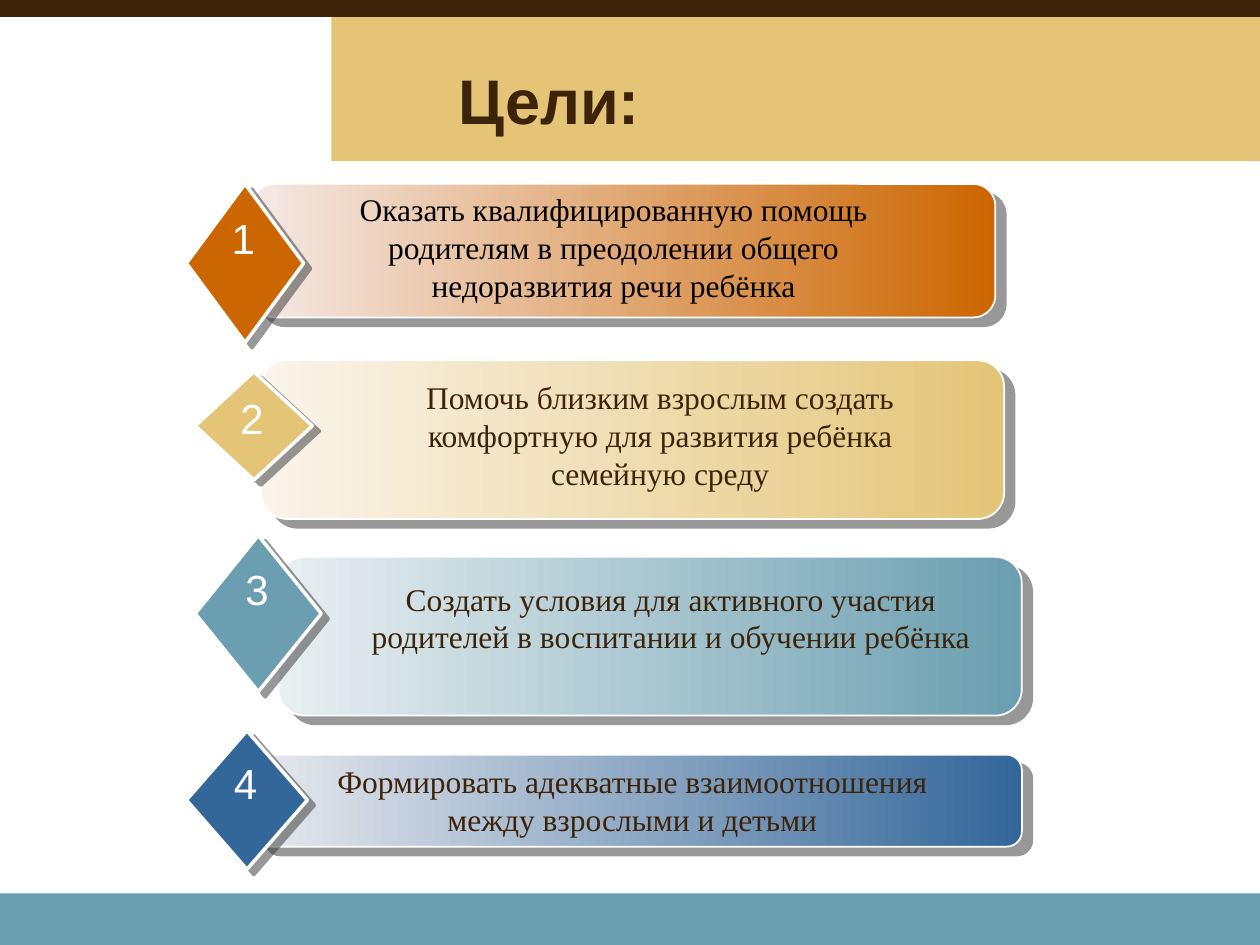
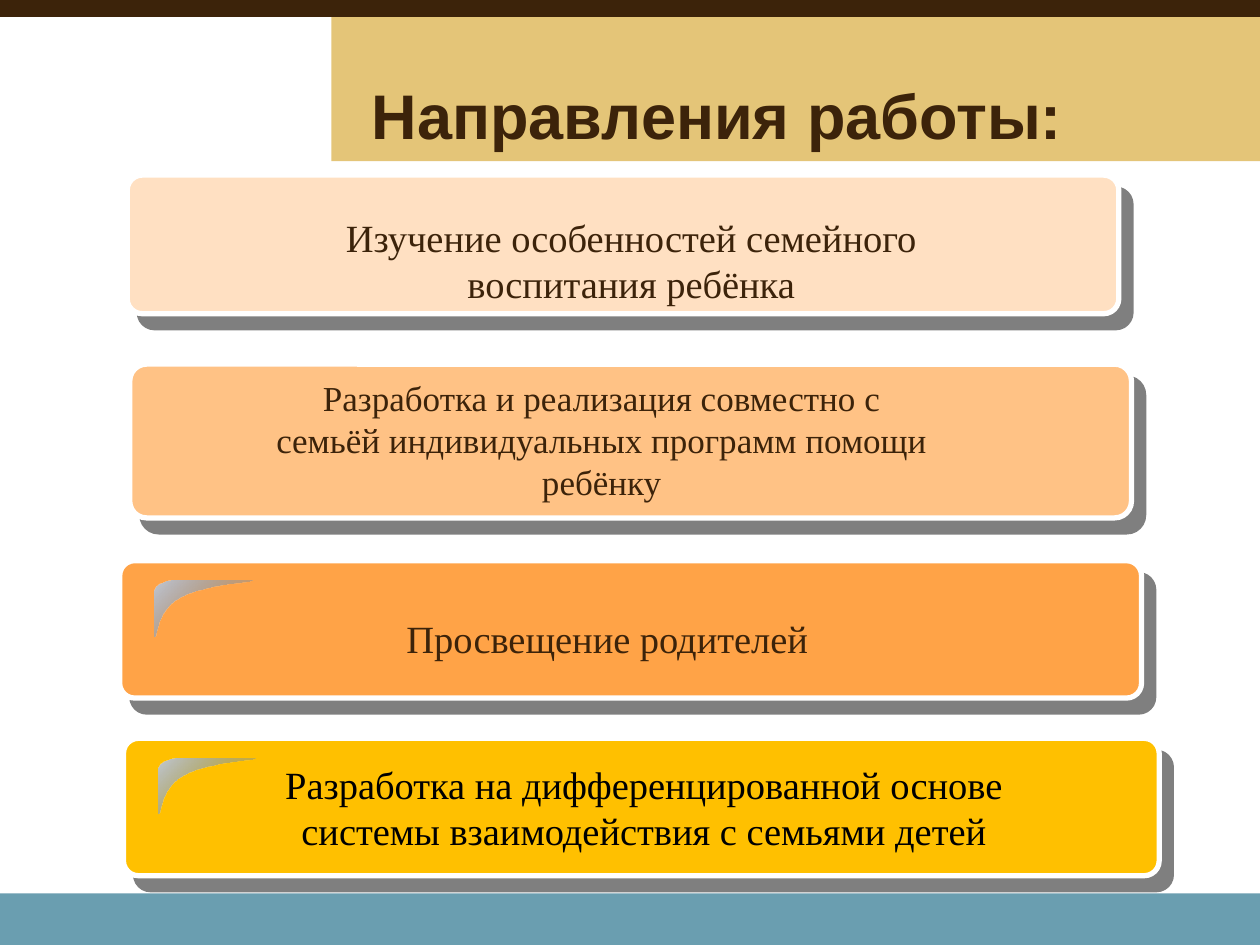
from lxml.etree import SubElement
from pptx import Presentation
from pptx.dml.color import RGBColor
from pptx.enum.shapes import MSO_SHAPE
from pptx.enum.text import MSO_ANCHOR, MSO_AUTO_SIZE, PP_ALIGN
from pptx.oxml.ns import qn
from pptx.util import Inches, Pt

BROWN, SAND, TEAL, WHITE, BLACK = "3C230A", "E4C578", "6A9EB0", "FFFFFF", "000000"
ORANGE, BLUE = "CC6600", "336699"
HEADING_FONT, BODY_FONT = "Arial", "Times New Roman"

BANDS = [
    ((2.63, 0.13, 7.37, 1.15), SAND, None),
    ((0, 7.09, 10, 0.44), TEAL, None),
    ((0, 0, 10, 0.13), BROWN, (BROWN, 0.75)),
]

GOALS = [
    ((2, 1.46, 5.9, 1.06), (1.48, 1.46, 0.93, 1.26), (1.69, 1.64, 0.48, 0.84),
     ("F5E9E6", ORANGE), (2.31, 1.46, 5.12, 1.01), BLACK,
     "Оказать квалифицированную помощь родителям в преодолении общего недоразвития речи ребёнка"),
    ((2.07, 2.86, 5.9, 1.26), (1.55, 2.95, 0.93, 0.86), (1.76, 3.07, 0.48, 0.57),
     ("FAF4EB", SAND), (2.74, 2.95, 5, 1.01), BROWN,
     "Помочь близким взрослым создать комфортную для развития ребёнка семейную среду"),
    ((2.21, 4.42, 5.9, 1.26), (1.55, 4.25, 1, 1.24), (1.78, 4.42, 0.52, 0.83),
     ("E9EFF1", TEAL), (2.74, 4.55, 5.17, 0.71), BROWN,
     "Создать условия для активного участия родителей в воспитании и обучении ребёнка"),
    ((2.02, 5.99, 6.09, 0.73), (1.48, 5.8, 0.96, 1.1), (1.7, 5.96, 0.5, 0.73),
     ("E7E9EE", BLUE), (2.52, 6, 5, 0.71), BROWN,
     "Формировать адекватные взаимоотношения между взрослыми и детьми"),
]

DIRECTIONS = [
    ((1.01, 1.39, 7.87, 1.1), "FFE0C2", None, (2.51, 1.65, 5, 0.84), 22, BROWN,
     "Изучение особенностей семейного воспитания ребёнка"),
    ((1.03, 2.89, 7.95, 1.22), "FFC285", None, (2.03, 2.94, 5.49, 1.11), 20, BROWN,
     "Разработка и реализация совместно с семьёй индивидуальных программ помощи ребёнку"),
    ((0.95, 4.45, 8.11, 1.09), "FFA347", (1.23, 4.61), (2.51, 4.83, 4.62, 0.47), 22, BROWN,
     "Просвещение родителей"),
    ((0.98, 5.86, 8.22, 1.09), "FFC000", (1.26, 6.02), (2.07, 5.99, 6.08, 0.84), 22, BLACK,
     "Разработка на дифференцированной основе системы взаимодействия с семьями детей"),
]

CORNER_CURVES = [
    [(0.15, 0), (0.07, 0), (0, 0.04), (0, 0.09)],
    [(0, 0.44), (0.03, 0.45), (0.01, 0.23), (0.21, 0.13)],
    [(0.21, 0.13), (0.4, 0.03), (0.78, 0.02), (0.77, 0)],
]

GOAL_BAR_SHADOW = ("333333", 7.8, 40)
DIAMOND_SHADOW = ("333333", 5, 37)
PANEL_SHADOW = ("000000", 10.6, 49)


def color(value):
    return RGBColor.from_string(value)


def curve_points(curve, steps=12):
    for step in range(steps + 1):
        t = step / steps
        weights = ((1 - t) ** 3, 3 * t * (1 - t) ** 2, 3 * t * t * (1 - t), t ** 3)
        yield tuple(sum(w * point[axis] for w, point in zip(weights, curve)) for axis in (0, 1))


class Deck:
    def __init__(self):
        self.presentation = Presentation()
        self.presentation.slide_width = Inches(10)
        self.presentation.slide_height = Inches(7.5)
        self.layout = self.presentation.slide_layouts[5]
        self.slide = None

    def add_slide(self, title, box):
        first = self.slide is None
        self.slide = self.presentation.slides.add_slide(self.layout)
        if first:
            self.add_layout_bands()
        shape = self.slide.shapes.title
        shape.left, shape.top, shape.width, shape.height = map(Inches, box)
        self.set_text(shape.text_frame, title, 36, BROWN, HEADING_FONT, PP_ALIGN.RIGHT, True)
        shape.text_frame.vertical_anchor = MSO_ANCHOR.MIDDLE
        shape.text_frame.auto_size = MSO_AUTO_SIZE.NONE

    def add_layout_bands(self):
        first_placeholder = self.layout.placeholders[0].element
        for box, fill, line in BANDS:
            band = self.shape(MSO_SHAPE.RECTANGLE, box, fill, line)
            first_placeholder.addprevious(band.element)

    def shape(self, kind, box, fill, line=None, shadow=None, corner=None):
        shape = self.slide.shapes.add_shape(kind, *map(Inches, box))
        if corner is not None:
            shape.adjustments[0] = corner
        self.paint(shape, fill, line)
        if shadow:
            self.cast_shadow(shape, *shadow)
        return shape

    def paint(self, shape, fill, line=None, angle=0):
        if isinstance(fill, str):
            shape.fill.solid()
            shape.fill.fore_color.rgb = color(fill)
        else:
            shape.fill.gradient()
            shape.fill.gradient_angle = angle
            for stop, value, position in zip(shape.fill.gradient_stops, fill, (0, 1)):
                stop.color.rgb = color(value)
                stop.position = position
        if line:
            shape.line.color.rgb = color(line[0])
            shape.line.width = Pt(line[1])
        else:
            shape.line.fill.background()
        shape.shadow.inherit = False

    def cast_shadow(self, shape, value, distance, angle):
        effects = shape.element.spPr.find(qn("a:effectLst"))
        shadow = SubElement(effects, qn("a:outerShdw"), dist=str(Pt(distance)),
                            dir=str(angle * 60000), algn="ctr", rotWithShape="0")
        tint = SubElement(shadow, qn("a:srgbClr"), val=value)
        SubElement(tint, qn("a:alpha"), val="50000")

    def corner_highlight(self, left, top):
        points = [(Inches(left + x), Inches(top + y))
                  for curve in CORNER_CURVES for x, y in curve_points(curve)]
        builder = self.slide.shapes.build_freeform(*points[0])
        builder.add_line_segments(points[1:], close=True)
        shape = builder.convert_to_shape()
        self.paint(shape, ("C1C8D5", BLUE), angle=315)
        last_stop = shape.element.spPr.findall(".//" + qn("a:srgbClr"))[-1]
        SubElement(last_stop, qn("a:alpha"), val="0")

    def text(self, box, text, size, value, font=BODY_FONT, wrap=True):
        frame = self.slide.shapes.add_textbox(*map(Inches, box)).text_frame
        frame.word_wrap = wrap
        frame.auto_size = MSO_AUTO_SIZE.SHAPE_TO_FIT_TEXT
        self.set_text(frame, text, size, value, font, PP_ALIGN.CENTER)

    def set_text(self, frame, text, size, value, font, alignment, bold=False):
        frame.text = text
        paragraph = frame.paragraphs[0]
        paragraph.alignment = alignment
        paragraph.font.name = font
        paragraph.font.size = Pt(size)
        paragraph.font.bold = bold
        paragraph.font.color.rgb = color(value)


def add_goals(deck):
    deck.add_slide("Цели:", (2.85, 0.43, 2.33, 0.72))
    for number, goal in enumerate(GOALS, 1):
        bar, diamond, number_box, gradient, text_box, text_color, text = goal
        deck.shape(MSO_SHAPE.ROUNDED_RECTANGLE, bar, gradient, (WHITE, 1), GOAL_BAR_SHADOW, 0.167)
        deck.shape(MSO_SHAPE.DIAMOND, diamond, gradient[1], (WHITE, 2), DIAMOND_SHADOW)
        deck.text(number_box, str(number), 24, WHITE, HEADING_FONT, wrap=False)
        deck.text(text_box, text, 18, text_color)


def add_directions(deck):
    deck.add_slide("Направления работы:", (2.59, 0.6, 5.94, 0.62))
    for panel, fill, highlight, text_box, size, text_color, text in DIRECTIONS:
        deck.shape(MSO_SHAPE.ROUNDED_RECTANGLE, panel, fill, (WHITE, 3), PANEL_SHADOW, 0.109)
        if highlight:
            deck.corner_highlight(*highlight)
        deck.text(text_box, text, size, text_color)


def main():
    deck = Deck()
    add_goals(deck)
    add_directions(deck)
    deck.presentation.save("out.pptx")


if __name__ == "__main__":
    main()
